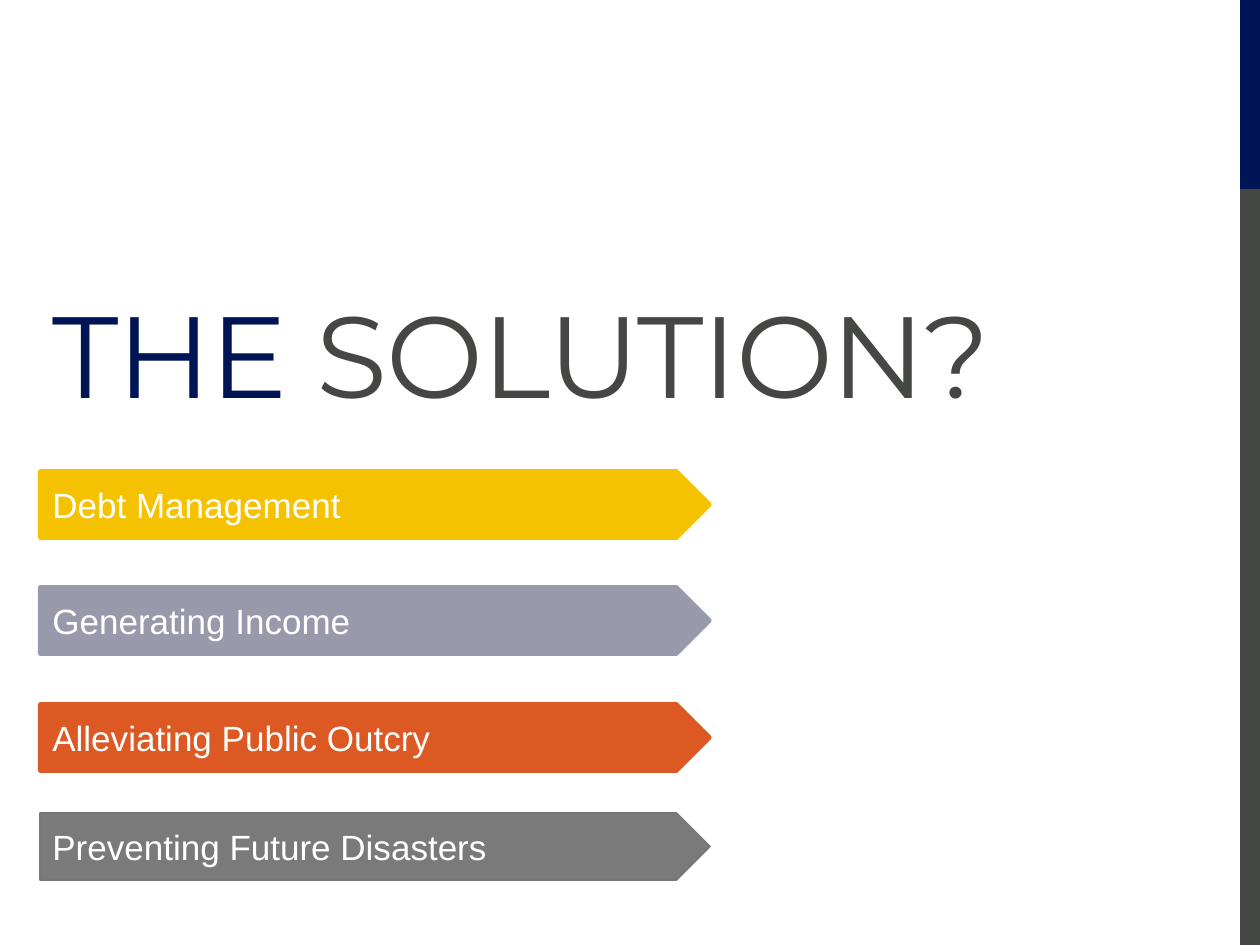
from dataclasses import dataclass

from pptx import Presentation
from pptx.dml.color import RGBColor
from pptx.enum.shapes import MSO_SHAPE as Shape
from pptx.enum.text import MSO_ANCHOR as Anchor, PP_ALIGN as Align
from pptx.util import Emu, Pt

EMU_PER_PX = 914400 / 126
NAVY, CHARCOAL, WHITE = "001556", "454744", "FFFFFF"


@dataclass
class Box:
    left: int
    top: int
    width: int
    height: int

    def emu(self) -> list[Emu]:
        return [px(n) for n in (self.left, self.top, self.width, self.height)]


@dataclass
class Arrow:
    label: str
    top: int
    fill: str
    line: str
    line_width: float = 2.25


STRIPES = [(Box(1240, 0, 20, 189), NAVY), (Box(1240, 189, 20, 756), CHARCOAL)]
TITLE_BOX = Box(40, 83, 1109, 538)
TITLE_RUNS = [("THE ", NAVY), ("SOLUTION?", CHARCOAL)]
ARROWS = [
    Arrow("Debt Management", 471, "F5C201", "F5C201"),
    Arrow("Generating Income", 587, "989AAC", "989AAC"),
    Arrow("Alleviating Public Outcry", 704, "DC5924", "DC5924"),
    Arrow("Preventing Future Disasters", 813, "7A7A7A", "777777", 1),
]


def px(length: int) -> Emu:
    return Emu(round(length * EMU_PER_PX))


def color(value: str) -> RGBColor:
    return RGBColor.from_string(value)


def add_filled(page, kind: Shape, box: Box, fill: str):
    shape = page.shapes.add_shape(kind, *box.emu())
    shape.shadow.inherit = False
    shape.fill.solid()
    shape.fill.fore_color.rgb = color(fill)
    shape.line.fill.background()
    return shape


def add_span(para, text: str, font: str, size: int, value: str):
    span = para.add_run()
    span.text = text
    span.font.name = font
    span.font.size = Pt(size)
    span.font.color.rgb = color(value)
    return span


def start_text(shape):
    frame = shape.text_frame
    frame.word_wrap = True
    frame.vertical_anchor = Anchor.MIDDLE
    para = frame.paragraphs[0]
    para.alignment = Align.LEFT
    return para


def add_title(page) -> None:
    para = start_text(page.shapes.add_textbox(*TITLE_BOX.emu()))
    for text, value in TITLE_RUNS:
        span = add_span(para, text, "Montserrat", 66, value)
        span.font._element.set("spc", "-60")


def add_arrow(page, arrow: Arrow) -> None:
    shape = add_filled(page, Shape.PENTAGON, Box(40, arrow.top, 670, 67), arrow.fill)
    shape.line.color.rgb = color(arrow.line)
    shape.line.width = Pt(arrow.line_width)
    add_span(start_text(shape), arrow.label, "Arial", 20, WHITE)


def main() -> None:
    deck = Presentation()
    deck.slide_width, deck.slide_height = px(1260), px(945)
    page = deck.slides.add_slide(deck.slide_layouts[6])
    for box, fill in STRIPES:
        add_filled(page, Shape.RECTANGLE, box, fill)
    add_title(page)
    for arrow in ARROWS:
        add_arrow(page, arrow)
    deck.save("out.pptx")


if __name__ == "__main__":
    main()
